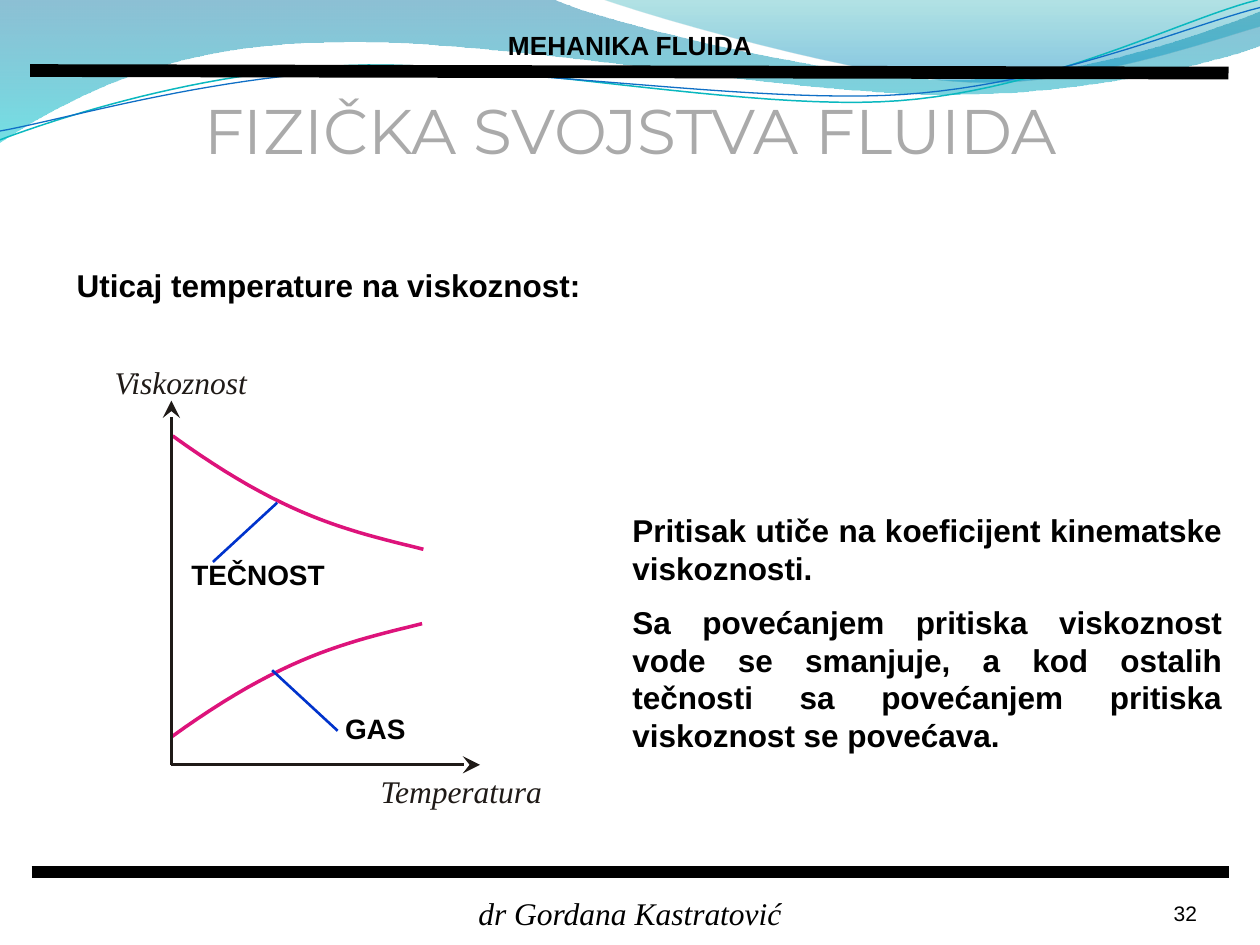
from lxml.etree import SubElement
from pptx import Presentation
from pptx.dml.color import RGBColor
from pptx.enum.shapes import MSO_CONNECTOR
from pptx.enum.text import MSO_ANCHOR, PP_ALIGN
from pptx.oxml.ns import qn
from pptx.util import Inches, Pt

BLACK, INK, CURVE, LEADER = "000000", "1F1A17", "DD137B", "0033CC"
LEFT, CENTER, RIGHT, JUSTIFY = PP_ALIGN.LEFT, PP_ALIGN.CENTER, PP_ALIGN.RIGHT, PP_ALIGN.JUSTIFY
INSETS, NO_INSETS = (0.1, 0.05, 0.1, 0.05), (0, 0, 0, 0)

# An outline is a start point, then segments: one point is a straight line,
# three points are a cubic curve.
# (start, segments), gradient stops as (position, colour, opacity in %)
BANDS = [
    (((0, 0), [
        [(4.4, 0)],
        [(4.76, 0.17), (6.64, 0.63), (7.58, 0.63)],
        [(8.53, 0.63), (9.58, 0.26), (10, 0.09)],
        [(10, 0.36)],
        [(9.83, 0.44), (8.7, 0.76), (7.46, 0.75)],
        [(6.22, 0.75), (3.82, 0.28), (2.57, 0.34)],
        [(1.29, 0.35), (0.46, 0.83), (0, 1.13)],
    ]), [(0, "0074A1", 45), (1, "00C6CF", 55)]),
    (((4.79, 0), [
        [(5.09, 0.11), (6.82, 0.62), (7.69, 0.65)],
        [(8.56, 0.69), (9.61, 0.32), (10, 0.21)],
        [(10, 0)],
    ]), [(0, "00A1A9", 30), (0.8, "008BBF", 45)]),
]
# (start, segments), colour, width
WAVES = [
    (((0, 1.11), [
        [(0.48, 0.93), (1.58, 0.57), (2.77, 0.52)],
        [(3.95, 0.47), (5.93, 0.89), (7.13, 0.8)],
        [(8.33, 0.71), (9.38, 0.15), (9.98, 0)],
    ]), "0AB8BF", 0.85),
    (((0, 1.04), [
        [(0.47, 0.96), (1.64, 0.61), (2.83, 0.56)],
        [(4.03, 0.51), (5.97, 0.83), (7.17, 0.75)],
        [(8.36, 0.67), (9.41, 0.21), (10, 0.06)],
    ]), "0F6FC6", 0.75),
]
LIQUID_CURVE = [(1.37, 3.46), (2.27, 4.11), (2.76, 4.21), (3.36, 4.36)]
GAS_CURVE = [(x - 0.01, 9.31 - y) for x, y in LIQUID_CURVE]

# from, to, colour, width, arrow
ORIGIN = (1.36, 6.07)
RULES = [
    ((0.24, 0.56), (9.75, 0.58), BLACK, 7.25, False),
    ((0.25, 6.92), (9.75, 6.92), BLACK, 7.25, False),
]
AXES = [
    (ORIGIN, (1.36, 3.18), INK, 1.75, True),
    (ORIGIN, (3.81, 6.07), INK, 1.75, True),
]
LEADERS = [
    ((1.69, 4.46), (2.2, 3.99), LEADER, 1.5, False),
    ((2.68, 5.8), (2.16, 5.32), LEADER, 1.5, False),
]

# box, paragraphs, size, font, colour, style, alignment, wrap, insets, anchor
TOP, BOTTOM = MSO_ANCHOR.TOP, MSO_ANCHOR.BOTTOM
SANS, SERIF = "Arial", "Times New Roman"
TEXTS = [
    ((8.67, 6.95, 0.83, 0.4), ["32"], 12, SANS, BLACK, "", RIGHT, True, NO_INSETS, BOTTOM),
    ((3.71, 0.18, 2.58, 0.35), ["MEHANIKA FLUIDA"], 15, SANS, BLACK, "b", CENTER, True, INSETS, TOP),
    ((0.91, 2.88, 1.07, 0.3), ["Viskoznost"], 18, SERIF, INK, "i", LEFT, False, NO_INSETS, TOP),
    ((3.02, 6.13, 1.31, 0.3), ["Temperatura"], 18, SERIF, INK, "i", LEFT, False, NO_INSETS, TOP),
    ((1.17, 0.68, 7.67, 0.71), ["FIZIČKA SVOJSTVA FLUIDA"], 36, "Montserrat", "AAAAAA", "", CENTER,
     False, INSETS, TOP),
    ((0.51, 2.06, 6.62, 0.4), ["Uticaj temperature na viskoznost:"], 18, SANS, BLACK, "b", LEFT,
     True, INSETS, TOP),
    ((1.42, 4.38, 1.29, 0.37), ["TEČNOST"], 16, SANS, BLACK, "b", LEFT, True, INSETS, TOP),
    ((2.64, 5.6, 0.76, 0.37), ["GAS"], 16, SANS, BLACK, "b", LEFT, True, INSETS, TOP),
    ((4.92, 4.01, 4.78, 2.05), [
        "Pritisak utiče na koeficijent kinematske viskoznosti.",
        "Sa povećanjem pritiska viskoznost vode se smanjuje, a kod ostalih tečnosti "
        "sa povećanjem pritiska viskoznost se povećava.",
    ], 18, SANS, BLACK, "b", JUSTIFY, True, (0.1, 0.05, 0, 0.05), TOP),
    ((3.69, 7.05, 2.62, 0.4), ["dr Gordana Kastratović"], 18, SERIF, BLACK, "i", CENTER,
     False, INSETS, TOP),
]


def rgb(colour):
    return RGBColor.from_string(colour)


def sample(start, segments, steps=24):
    """Turn straight and cubic segments into a list of points."""
    points = [start]
    for segment in segments:
        if len(segment) == 1:
            points += segment
            continue
        corners = [points[-1], *segment]
        for step in range(1, steps + 1):
            t = step / steps
            weights = ((1 - t) ** 3, 3 * t * (1 - t) ** 2, 3 * t * t * (1 - t), t ** 3)
            points.append(tuple(sum(w * corner[axis] for w, corner in zip(weights, corners))
                                for axis in (0, 1)))
    return points


def add_outline(slide, outline, closed):
    points = [(Inches(x), Inches(y)) for x, y in sample(*outline)]
    builder = slide.shapes.build_freeform(*points[0], scale=1.0)
    builder.add_line_segments(points[1:], close=closed)
    shape = builder.convert_to_shape()
    shape.shadow.inherit = False
    return shape


def add_band(slide, outline, stops):
    band = add_outline(slide, outline, True)
    band.line.fill.background()
    band.fill.gradient()
    band.fill.gradient_angle = 270
    for stop, (position, colour, _) in zip(band.fill.gradient_stops, stops):
        stop.position = position
        stop.color.rgb = rgb(colour)
    for element, (_, _, opacity) in zip(band._element.spPr.iter(qn("a:srgbClr")), stops):
        SubElement(element, qn("a:alpha"), val=str(opacity * 1000))


def add_curve(slide, outline, colour, width):
    curve = add_outline(slide, outline, False)
    curve.fill.background()
    curve.line.color.rgb = rgb(colour)
    curve.line.width = Pt(width)


def add_line(slide, start, end, colour, width, arrow):
    line = slide.shapes.add_connector(
        MSO_CONNECTOR.STRAIGHT, *(Inches(value) for value in (*start, *end)))
    line.line.color.rgb = rgb(colour)
    line.line.width = Pt(width)
    properties = line._element.spPr
    if arrow:
        SubElement(properties.find(qn("a:ln")), qn("a:tailEnd"), type="stealth", w="lg", len="lg")
    SubElement(properties, qn("a:effectLst"))


def add_text(slide, box, paragraphs, size, font, colour, style, alignment, wrap, insets, anchor):
    frame = slide.shapes.add_textbox(*(Inches(value) for value in box)).text_frame
    frame.word_wrap = wrap
    frame.vertical_anchor = anchor
    (frame.margin_left, frame.margin_top,
     frame.margin_right, frame.margin_bottom) = (Inches(value) for value in insets)
    for index, text in enumerate(paragraphs):
        paragraph = frame.add_paragraph() if index else frame.paragraphs[0]
        paragraph.alignment = alignment
        if index:
            paragraph.space_before = Pt(size / 2)
        run = paragraph.add_run()
        run.text = text
        run.font.name = font
        run.font.size = Pt(size)
        run.font.bold = "b" in style
        run.font.italic = "i" in style
        run.font.color.rgb = rgb(colour)


def main():
    presentation = Presentation()
    presentation.slide_width, presentation.slide_height = Inches(10), Inches(7.5)
    slide = presentation.slides.add_slide(presentation.slide_layouts[6])
    for band in BANDS:
        add_band(slide, *band)
    for wave in WAVES:
        add_curve(slide, *wave)
    for start, *controls in (LIQUID_CURVE, GAS_CURVE):
        add_curve(slide, (start, [controls]), CURVE, 2)
    for line in RULES + AXES + LEADERS:
        add_line(slide, *line)
    for text in TEXTS:
        add_text(slide, *text)
    presentation.save("out.pptx")


if __name__ == "__main__":
    main()
